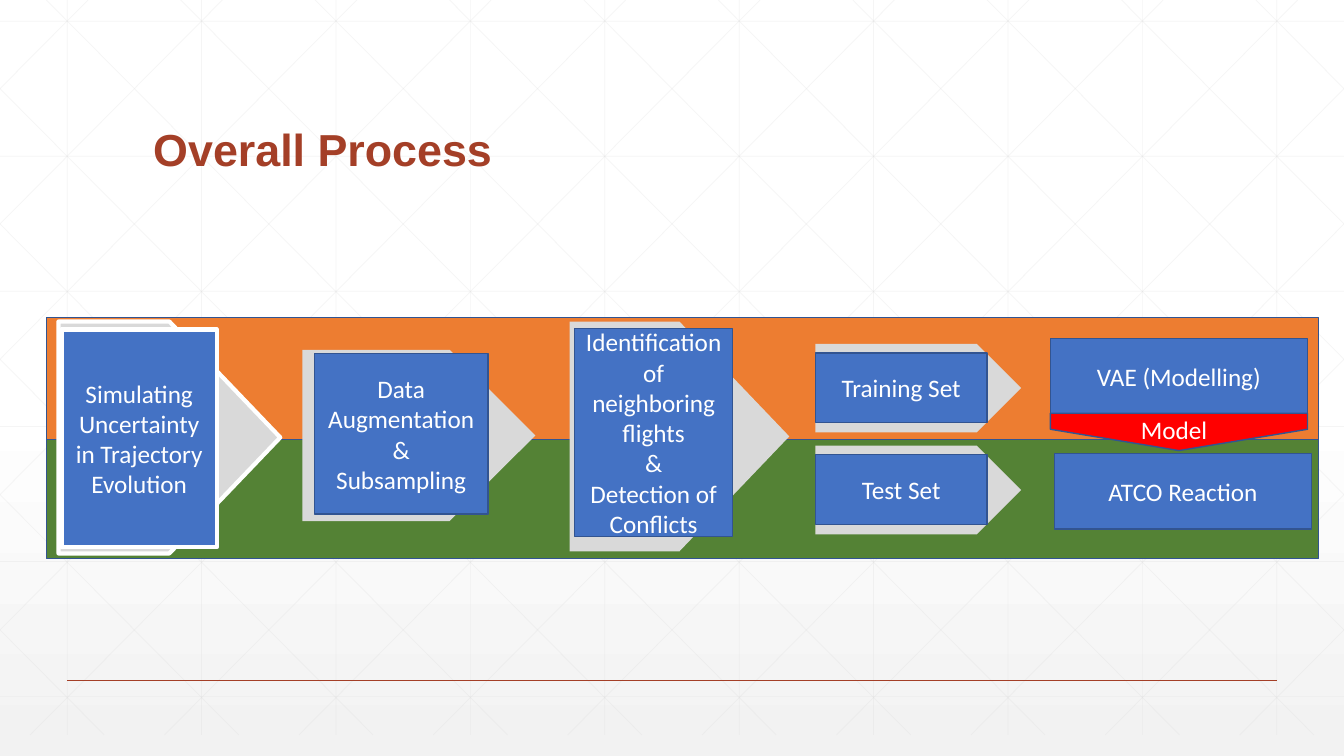
import pptx
import pptx.util
import pptx.dml.color
import pptx.enum.shapes
import pptx.enum.text
import pptx.oxml.ns
import lxml.etree

RGB = pptx.dml.color.RGBColor
WHITE = RGB(0xFF, 0xFF, 0xFF)
SMOKE = RGB(0xF2, 0xF2, 0xF2)
GREY = RGB(0xD9, 0xD9, 0xD9)
RUST = RGB(0xA4, 0x3F, 0x27)
GREEN = RGB(0x54, 0x82, 0x35)
ORANGE = RGB(0xED, 0x7D, 0x31)
BLUE = RGB(0x44, 0x72, 0xC4)
NAVY = RGB(0x32, 0x54, 0x91)
RED = RGB(0xFF, 0, 0)

KIND = pptx.enum.shapes.MSO_SHAPE
RECT, PLATE = KIND.RECTANGLE, KIND.PENTAGON
ALIGN = pptx.enum.text.PP_ALIGN
ANCHOR = pptx.enum.text.MSO_ANCHOR
FIT = pptx.enum.text.MSO_AUTO_SIZE
Pt = pptx.util.Pt
qn = pptx.oxml.ns.qn

deck = pptx.Presentation()
deck.slide_width = pptx.util.Inches(13.33)
deck.slide_height = pptx.util.Inches(7.5)
COL, ROW = deck.slide_width / 100, deck.slide_height / 100
slide = deck.slides.add_slide(deck.slide_layouts[5])
shapes = slide.shapes

BODY = {"size": Pt(18), "name": "Calibri", "bold": False}
HEAD = {"size": Pt(32), "name": "Arial", "bold": True}


def write(shape, text, align, look, color):
    frame = shape.text_frame
    frame.word_wrap = True
    frame.text = text
    for para in frame.paragraphs:
        para.alignment = align
        for key, value in look.items():
            setattr(para.font, key, value)
        para.font.color.rgb = color


def block(kind, spot, fill, edge=None, width=1, text=""):
    left, top, wide, high = spot
    shape = shapes.add_shape(kind, int(left * COL), int(top * ROW),
                             int(wide * COL), int(high * ROW))
    shape.shadow.inherit = False
    shape.fill.solid()
    shape.fill.fore_color.rgb = fill
    if edge is None:
        shape.line.fill.background()
    else:
        shape.line.color.rgb = edge
        shape.line.width = Pt(width)
    if text:
        shape.text_frame.vertical_anchor = ANCHOR.MIDDLE
        write(shape, text, ALIGN.CENTER, BODY, WHITE)
    return shape


back = slide.background.fill
back.gradient()
back.gradient_angle = 270
for stop, place, color in zip(back.gradient_stops, (0.53, 1), (WHITE, SMOKE)):
    stop.position = place
    stop.color.rgb = color

STEP, BASE = 10, 97.2
RISE = 1.79
lines = [(5 + STEP * i, 0, 5 + STEP * i, BASE) for i in range(10)]
lines += [(0, 2.8 + 17.87 * i, 100, 2.8 + 17.87 * i) for i in range(6)]
for i in range(-5, 10):
    start = 3.45 + STEP * i
    left, right = max(0, start), min(100, start + BASE / RISE)
    top, end = (left - start) * RISE, (right - start) * RISE
    lines += [(left, top, right, end), (100 - left, top, 100 - right, end)]
rules = [(line, GREY, 0.5, 25) for line in lines]
rules.append(((5, 90, 95, 90), RUST, 1, 100))

for (x1, y1, x2, y2), color, width, alpha in rules:
    rule = shapes.add_connector(pptx.enum.shapes.MSO_CONNECTOR.STRAIGHT,
                                int(x1 * COL), int(y1 * ROW),
                                int(x2 * COL), int(y2 * ROW))
    rule.line.color.rgb = color
    rule.line.width = Pt(width)
    props = rule.element.spPr
    lxml.etree.SubElement(props, qn("a:effectLst"))
    if alpha < 100:
        tint = next(props.iter(qn("a:srgbClr")))
        lxml.etree.SubElement(tint, qn("a:alpha"), val=str(alpha * 1000))

title = shapes.title
title.element.getparent().append(title.element)
title.left, title.top = int(10.65 * COL), int(7.33 * ROW)
title.width, title.height = int(78.75 * COL), int(16.67 * ROW)
write(title, "Overall Process", ALIGN.LEFT, HEAD, RUST)
title.text_frame.auto_size = FIT.NONE
title.text_frame.vertical_anchor = ANCHOR.BOTTOM
title.text_frame.paragraphs[0].line_spacing = 0.9

block(RECT, (3.45, 58, 94.65, 15.87), GREEN, NAVY)
block(RECT, (3.45, 42, 94.65, 16.13), ORANGE, NAVY)

for i, name in enumerate(("Training Set", "Test Set")):
    top = 45.47 + 13.47 * i
    block(PLATE, (60.68, top, 15.3, 11.73), GREY)
    block(RECT, (60.68, top + 1.2, 12.75, 9.2), BLUE, NAVY, text=name)

block(RECT, (78.45, 60, 19.13, 10), BLUE, NAVY, text="ATCO Reaction")
block(RECT, (78.15, 44.8, 19.13, 10), BLUE, NAVY, text="VAE (Modelling)")
arrow = block(PLATE, (86.33, 40.13, 2.78, 34), RED, NAVY)
arrow.rotation = 90
arrow.adjustments[0] = 0.57
model = shapes.add_textbox(int(84.15 * COL), int(54.13 * ROW),
                           int(7.13 * COL), int(5.33 * ROW))
write(model, "Model", ALIGN.LEFT, BODY, WHITE)

stages = [
    ((22.5, 46.27, 17.33, 22.67), (23.4, 46.8, 12.9, 21.2), None, NAVY, 1,
     "Data Augmentation &\nSubsampling"),
    ((42.38, 42.53, 16.35, 30.4), (42.75, 43.47, 11.78, 27.47), None, NAVY, 1,
     "Identification of neighboring flights\n&\nDetection of Conflicts"),
    ((4.35, 42.53, 16.5, 30.67), (4.58, 43.6, 11.55, 28.8), WHITE, WHITE, 3,
     "Simulating Uncertainty in Trajectory Evolution"),
]
for plate, card, rim, edge, width, text in stages:
    block(PLATE, plate, GREY, rim, width)
    block(RECT, card, BLUE, edge, width, text)

deck.save("out.pptx")
